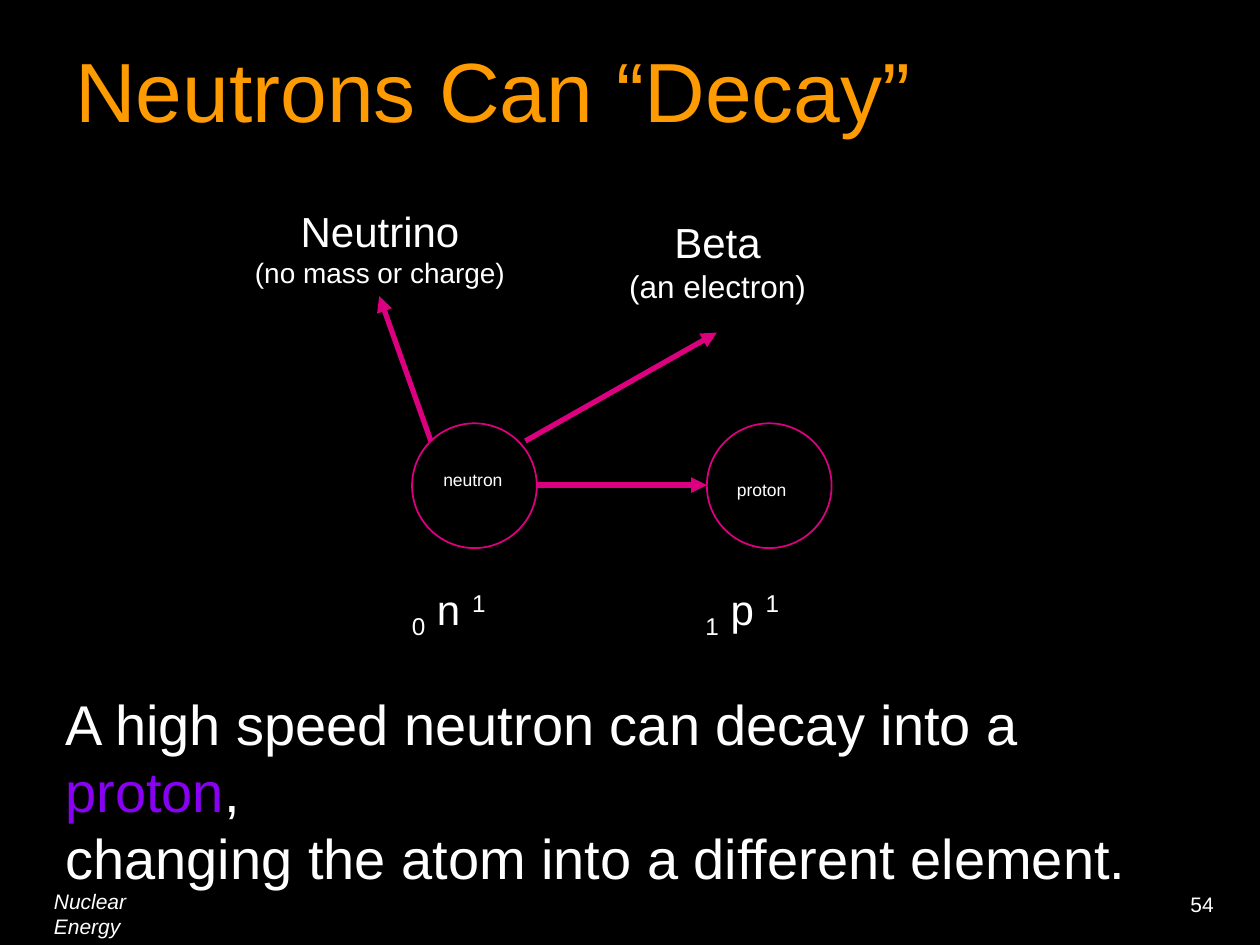
from dataclasses import dataclass

from lxml.etree import SubElement
from pptx import Presentation
from pptx.dml.color import RGBColor
from pptx.enum.shapes import MSO_CONNECTOR, MSO_SHAPE
from pptx.enum.text import MSO_ANCHOR, PP_ALIGN as Align
from pptx.oxml.ns import qn
from pptx.util import Emu, Pt

PX = 9144  # EMU per px, 100 px to the inch
FONT = "Arial"
COLORS = {
    "back": "000000",
    "text": "FFFFFF",
    "title": "FE9B03",
    "line": "DC0081",
    "accent": "8901F3",
}


@dataclass
class Run:
    text: str
    size: int = 24
    color: str = "text"
    base: int = 0  # percent above (+) or below (-) the baseline


@dataclass
class Particle:
    name: str
    symbol: str
    charge: str
    x: int
    name_x: int
    name_y: int
    symbol_x: int


@dataclass
class Arrow:
    x1: int
    y1: int
    x2: int
    y2: int


def px(n: int) -> Emu:
    return Emu(n * PX)


def rgb(name: str) -> RGBColor:
    return RGBColor.from_string(COLORS[name])


def add_text(s, box: tuple, *paragraphs: list, align=Align.LEFT,
             anchor=MSO_ANCHOR.TOP, italic: bool = False) -> None:
    tf = s.shapes.add_textbox(*map(px, box)).text_frame
    tf.word_wrap = True
    tf.vertical_anchor = anchor
    for i, runs in enumerate(paragraphs):
        p = tf.paragraphs[0] if i == 0 else tf.add_paragraph()
        p.alignment = align
        for run in runs:
            r = p.add_run()
            r.text = run.text
            r.font.name = FONT
            r.font.size = Pt(run.size)
            r.font.italic = italic
            r.font.color.rgb = rgb(run.color)
            if run.base:
                r.font._element.set("baseline", str(run.base * 1000))


def add_particle(s, pt: Particle) -> None:
    sp = s.shapes.add_shape(MSO_SHAPE.OVAL, px(pt.x), px(336), px(99), px(99))
    sp.shadow.inherit = False
    sp.fill.background()
    sp.line.color.rgb = rgb("line")
    sp.line.width = Pt(1)
    add_text(s, (pt.name_x, pt.name_y, 83, 27), [Run(pt.name, 10)])
    add_text(s, (pt.symbol_x, 458, 100, 50),
             [Run(pt.charge, base=-25), Run(f" {pt.symbol} "), Run("1", base=30)])


def add_arrow(s, a: Arrow) -> None:
    cx = s.shapes.add_connector(MSO_CONNECTOR.STRAIGHT,
                                px(a.x1), px(a.y1), px(a.x2), px(a.y2))
    cx.line.color.rgb = rgb("line")
    cx.line.width = Pt(3)
    sp_pr = cx._element.spPr
    SubElement(sp_pr.find(qn("a:ln")), qn("a:tailEnd"), type="triangle")
    SubElement(sp_pr, qn("a:effectLst"))


PARTICLES = [
    Particle("neutron", "n", "0", 327, 342, 367, 317),
    Particle("proton", "p", "1", 561, 575, 375, 550),
]
ARROWS = [
    Arrow(342, 350, 301, 235),  # to neutrino
    Arrow(417, 350, 569, 264),  # to beta
    Arrow(426, 385, 561, 385),  # to proton
]


def main() -> None:
    prs = Presentation()
    prs.slide_width, prs.slide_height = px(1000), px(750)
    s = prs.slides.add_slide(prs.slide_layouts[6])
    s.background.fill.solid()
    s.background.fill.fore_color.rgb = rgb("back")

    # Title
    add_text(s, (50, 33, 733, 76), [Run("Neutrons Can “Decay”", 48, "title")],
             anchor=MSO_ANCHOR.MIDDLE)

    # Decay diagram
    for particle in PARTICLES:
        add_particle(s, particle)
    for arrow in ARROWS:
        add_arrow(s, arrow)
    add_text(s, (187, 158, 229, 77), [Run("Neutrino")],
             [Run("(no mass or charge)", 16)], align=Align.CENTER)
    add_text(s, (473, 167, 193, 80), [Run("Beta")],
             [Run("(an electron)", 18)], align=Align.CENTER)

    # Conclusion
    add_text(s, (42, 542, 910, 117),
             [Run("A high speed neutron can decay into a ", 32),
              Run("proton", 32, "accent"), Run(",", 32)],
             [Run("changing the atom into a different element.", 32)])

    # Footer
    add_text(s, (33, 700, 120, 30), [Run("Nuclear Energy", 12)], italic=True)
    add_text(s, (935, 703, 40, 30), [Run("54", 12)])

    prs.save("out.pptx")


if __name__ == "__main__":
    main()
